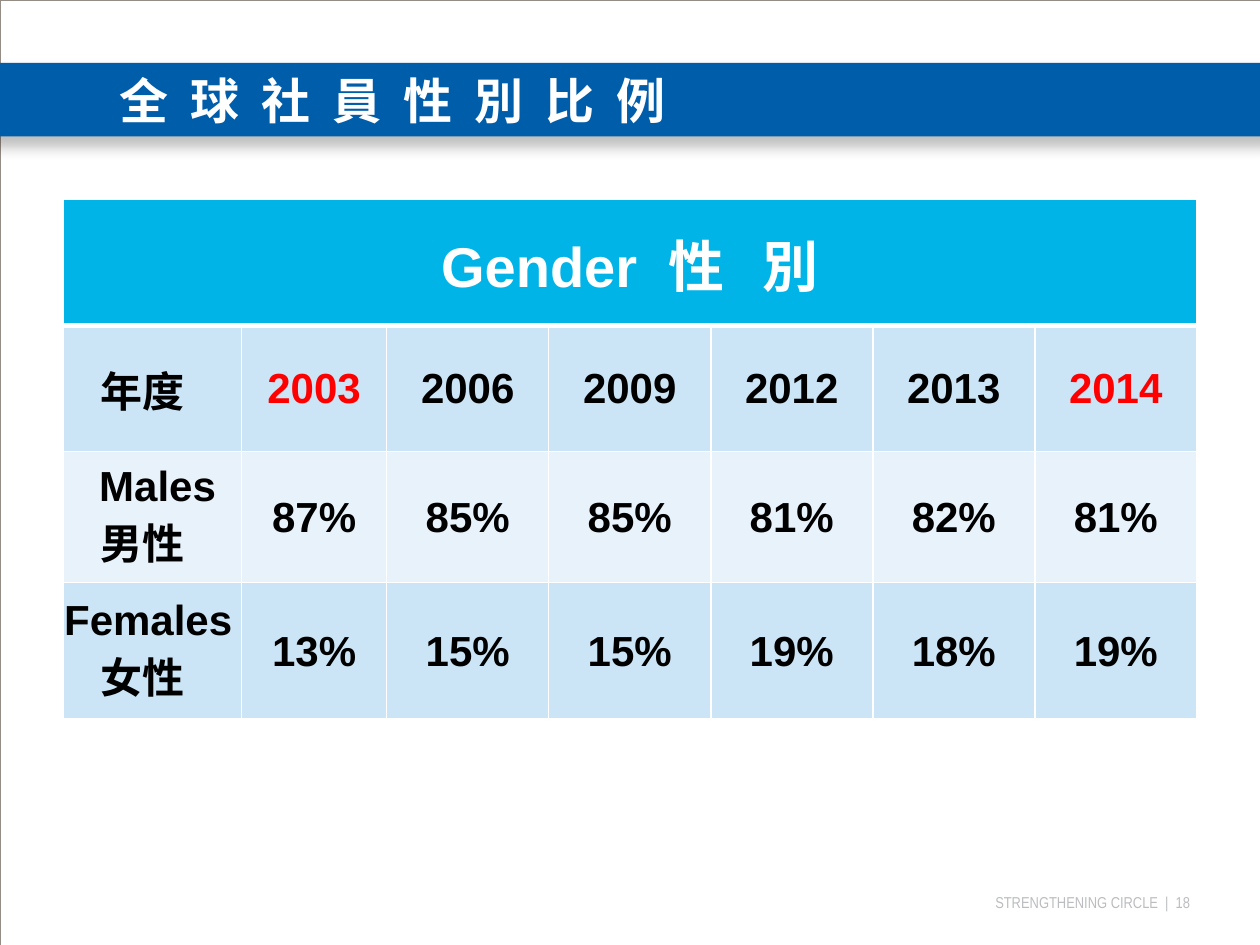
from lxml import etree
from pptx import Presentation
from pptx.dml.color import RGBColor
from pptx.enum.shapes import MSO_SHAPE
from pptx.enum.text import MSO_ANCHOR, PP_ALIGN
from pptx.oxml import parse_xml
from pptx.oxml.ns import nsdecls, qn
from pptx.util import Pt

RECTANGLE = MSO_SHAPE.RECTANGLE
MIDDLE, TOP = MSO_ANCHOR.MIDDLE, MSO_ANCHOR.TOP
LEFT, CENTER, RIGHT = PP_ALIGN.LEFT, PP_ALIGN.CENTER, PP_ALIGN.RIGHT

WHITE = RGBColor(0xFF, 0xFF, 0xFF)
BLACK = RGBColor(0, 0, 0)
RED = RGBColor(0xFF, 0, 0)
BAND_BLUE = RGBColor(0x00, 0x5D, 0xAA)
HEADER_BLUE = RGBColor(0x01, 0xB4, 0xE7)
ROW_DARK = RGBColor(0xCB, 0xE5, 0xF6)
ROW_LIGHT = RGBColor(0xE7, 0xF2, 0xFA)
FOOTER_GREY = RGBColor(0xBC, 0xBD, 0xC0)
FRAME_GREY = RGBColor(0x95, 0x8D, 0x85)

CJK_FONT = "Noto Sans CJK SC"
TITLE_FONT = {"name": CJK_FONT, "size": Pt(28), "bold": True}
HEADER_FONT = {"name": "Arial", "size": Pt(32), "bold": True}
CELL_FONT = {"name": "Arial", "size": Pt(24), "bold": True}
FOOTER_FONT = {"name": "Arial Narrow", "size": Pt(9), "bold": False}

CELL_MARGINS = {"margin_left": Pt(0.7), "margin_top": Pt(0.7),
                "margin_right": Pt(0.7), "margin_bottom": 0}

SLIDE_WIDTH, SLIDE_HEIGHT = 720, 540
BAND_TOP, BAND_HEIGHT = 36, 42

YEARS = ["2003", "2006", "2009", "2012", "2013", "2014"]
HIGHLIGHTED_YEARS = {"2003", "2014"}
MALES = ["87%", "85%", "85%", "81%", "82%", "81%"]
FEMALES = ["13%", "15%", "15%", "19%", "18%", "19%"]

# Label lines are (text, indent in points).
BODY_ROWS = [
    ([("年度", 21)], YEARS, ROW_DARK),
    ([("Males", 20), ("男性", 21)], MALES, ROW_LIGHT),
    ([("Females", 0), ("女性", 21)], FEMALES, ROW_DARK),
]
COLUMN_WIDTHS = [102, 83] + [92.6] * 5
ROW_HEIGHTS = [72, 72, 75, 78]


def set_all(target, values):
    for name, value in values.items():
        setattr(target, name, value)


class GenderSlide:
    def __init__(self, presentation):
        self.slide = presentation.slides.add_slide(presentation.slide_layouts[5])
        self.shapes = self.slide.shapes

    def add_words(self, paragraph, words, font, color, align=CENTER, gap=0):
        """Set words separated by single spaces, each widened by gap points."""
        paragraph.alignment = align
        gaps = gap if isinstance(gap, list) else [gap] * (len(words) - 1)
        for index, word in enumerate(words):
            if index:
                space = self.add_run(paragraph, " ", font, color)
                space.font._element.set("spc", str(round(gaps[index - 1] * 100)))
            self.add_run(paragraph, word, font, color)

    def add_run(self, paragraph, text, font, color):
        run = paragraph.add_run()
        run.text = text
        set_all(run.font, font)
        run.font.color.rgb = color
        etree.SubElement(run.font._element, qn("a:ea"), typeface=CJK_FONT)
        return run

    def rectangle(self, left, top, width, height):
        rectangle = self.shapes.add_shape(
            RECTANGLE, Pt(left), Pt(top), Pt(width), Pt(height))
        rectangle.shadow.inherit = False
        return rectangle

    def frame(self):
        frame = self.rectangle(0, 0, SLIDE_WIDTH, SLIDE_HEIGHT)
        frame.fill.background()
        frame.line.color.rgb = FRAME_GREY
        frame.line.width = Pt(0.13)

    def band(self):
        band = self.rectangle(-6, BAND_TOP, SLIDE_WIDTH + 12, BAND_HEIGHT)
        band.fill.solid()
        band.fill.fore_color.rgb = BAND_BLUE
        band.line.fill.background()
        effects = band._element.spPr.find(qn("a:effectLst"))
        effects.append(parse_xml(
            f'<a:outerShdw {nsdecls("a")} blurRad="{Pt(8)}" dist="{Pt(5)}" '
            'dir="5400000" algn="t" rotWithShape="0"><a:srgbClr val="000000">'
            '<a:alpha val="25000"/></a:srgbClr></a:outerShdw>'))

    def title(self, characters):
        title = self.shapes.title
        set_all(title, {"left": 0, "top": Pt(BAND_TOP),
                        "width": Pt(SLIDE_WIDTH), "height": Pt(BAND_HEIGHT)})
        set_all(title.text_frame, {
            "margin_left": Pt(68), "margin_top": 0, "margin_right": 0,
            "margin_bottom": 0, "vertical_anchor": MIDDLE, "word_wrap": True})
        self.add_words(title.text_frame.paragraphs[0], characters,
                       TITLE_FONT, WHITE, LEFT, gap=6.3)
        # Bring the title in front of the band.
        self.shapes._spTree.append(title._element)

    def footer(self, words):
        footer = self.shapes.add_textbox(Pt(558), Pt(510), Pt(126), Pt(11))
        set_all(footer.text_frame, {
            "margin_left": 0, "margin_top": 0, "margin_right": Pt(4),
            "margin_bottom": 0, "vertical_anchor": TOP, "word_wrap": True})
        self.add_words(footer.text_frame.paragraphs[0], words,
                       FOOTER_FONT, FOOTER_GREY, RIGHT, gap=2)

    def style_cell(self, cell, fill, top=1, bottom=1):
        set_all(cell, CELL_MARGINS)
        cell.vertical_anchor = MIDDLE
        cell.fill.solid()
        cell.fill.fore_color.rgb = fill
        properties = cell._tc.get_or_add_tcPr()
        borders = {"lnL": 1, "lnR": 1, "lnT": top, "lnB": bottom}
        for position, (side, width) in enumerate(borders.items()):
            properties.insert(position, parse_xml(
                f'<a:{side} {nsdecls("a")} w="{Pt(width)}"><a:solidFill>'
                f'<a:srgbClr val="{WHITE}"/></a:solidFill></a:{side}>'))

    def label(self, cell, lines):
        frame = cell.text_frame
        for index, (text, indent) in enumerate(lines):
            paragraph = frame.add_paragraph() if index else frame.paragraphs[0]
            properties = paragraph._p.get_or_add_pPr()
            properties.set("marL", str(Pt(indent)))
            self.add_words(paragraph, [text], CELL_FONT, BLACK, LEFT)

    def table(self):
        table = self.shapes.add_table(
            len(ROW_HEIGHTS), len(COLUMN_WIDTHS), Pt(36), Pt(114),
            Pt(sum(COLUMN_WIDTHS)), Pt(sum(ROW_HEIGHTS))).table
        set_all(table, {"first_row": False, "horz_banding": False})
        for column, width in zip(table.columns, COLUMN_WIDTHS):
            column.width = Pt(width)
        for row, height in zip(table.rows, ROW_HEIGHTS):
            row.height = Pt(height)

        header = table.cell(0, 0)
        header.merge(table.cell(0, len(COLUMN_WIDTHS) - 1))
        for cell in table.rows[0].cells:
            self.style_cell(cell, HEADER_BLUE, bottom=3)
        self.add_words(header.text_frame.paragraphs[0], ["Gender", "性", "別"],
                       HEADER_FONT, WHITE, gap=[8.9, 14.4])

        for row, (label, values, fill) in enumerate(BODY_ROWS, start=1):
            for column in range(len(COLUMN_WIDTHS)):
                self.style_cell(table.cell(row, column), fill,
                                top=3 if row == 1 else 1)
            self.label(table.cell(row, 0), label)
            for column, value in enumerate(values, start=1):
                color = RED if value in HIGHLIGHTED_YEARS else BLACK
                self.add_words(table.cell(row, column).text_frame.paragraphs[0],
                               [value], CELL_FONT, color)


def main():
    presentation = Presentation()
    presentation.slide_width = Pt(SLIDE_WIDTH)
    presentation.slide_height = Pt(SLIDE_HEIGHT)
    slide = GenderSlide(presentation)
    slide.footer(["STRENGTHENING CIRCLE", "|", "18"])
    slide.frame()
    slide.band()
    slide.title("全球社員性別比例")
    slide.table()
    presentation.save("out.pptx")


if __name__ == "__main__":
    main()
